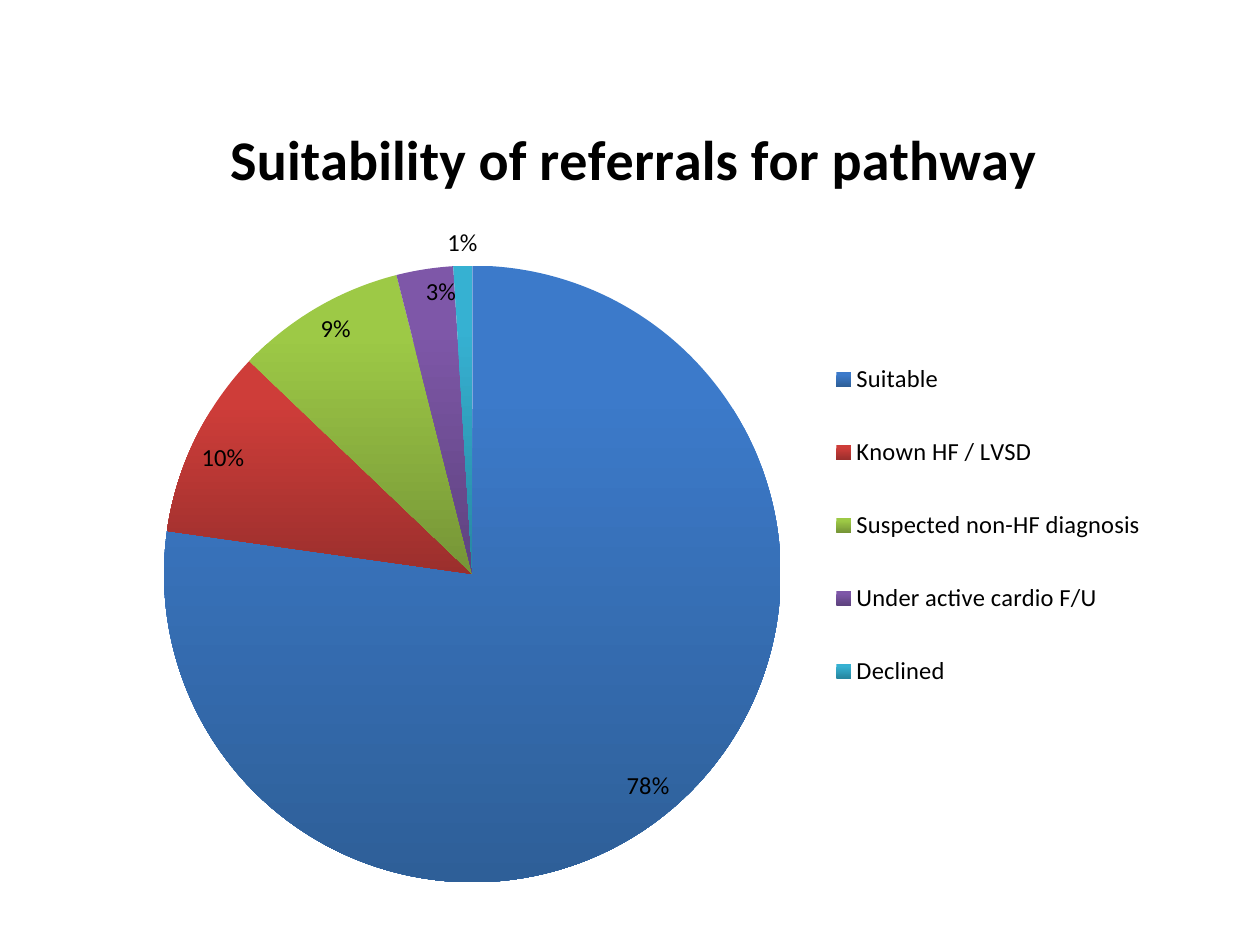
from lxml import etree
from pptx import Presentation
from pptx import util as u
from pptx.chart import data as cd
from pptx.dml.color import RGBColor
from pptx.enum import chart as ce

COLORS = {
    "text": "000000",
    "Suitable": ("3C7ACA", "2E5F98"),
    "Known HF / LVSD": ("CE3D39", "9B2F2D"),
    "Suspected non-HF diagnosis": ("9DC946", "769537"),
    "Under active cardio F/U": ("7E57A8", "5E437F"),
    "Declined": ("36B1D2", "2787A0"),
}
REFERRALS = {
    "Suitable": 78,
    "Known HF / LVSD": 10,
    "Suspected non-HF diagnosis": 9,
    "Under active cardio F/U": 3,
    "Declined": 1,
}


def style_font(font, size, bold=False):
    """Apply the slide's typeface and text colour."""
    font.name, font.size, font.bold = "Calibri", u.Pt(size), bold
    font.color.rgb = RGBColor.from_string(COLORS["text"])


def set_layout(chart, tag, index, inner=False, **fractions):
    """Place a chart part by fractions of the chart area."""
    part = chart._chartSpace.xpath(f"c:chart//c:{tag}")[0]
    ns = "{%s}" % part.nsmap["c"]
    for old in part.findall(ns + "layout"):
        part.remove(old)
    layout = etree.Element(ns + "layout")
    manual = etree.SubElement(layout, ns + "manualLayout")
    if inner:
        etree.SubElement(manual, ns + "layoutTarget", val="inner")
    for axis in "xy":
        etree.SubElement(manual, f"{ns}{axis}Mode", val="edge")
    for key, value in fractions.items():
        etree.SubElement(manual, ns + key, val=str(value))
    part.insert(index, layout)


def style_slices(series):
    """Shade every slice from a light top to a dark bottom."""
    for i, name in enumerate(REFERRALS):
        fill = series.points[i].format.fill
        fill.gradient()
        fill.gradient_angle = 270
        for stop, position, color in zip(fill.gradient_stops, (0.2, 1), COLORS[name]):
            stop.position = position
            stop.color.rgb = RGBColor.from_string(color)


def add_labels(series):
    """Label slices inside, with the narrowest one outside."""
    labels = series.data_labels
    labels.show_value = True
    labels.number_format, labels.number_format_is_linked = '0"%"', False
    labels.position = ce.XL_LABEL_POSITION.INSIDE_END
    style_font(labels.font, 14)
    last = series.points[len(REFERRALS) - 1].data_label
    style_font(last.font, 14)
    last.position = ce.XL_LABEL_POSITION.OUTSIDE_END


def add_referral_pie(slide, left, top, width, height):
    """Draw the referral pie with its title and legend in the given box."""
    data = cd.CategoryChartData(number_format='0"%"')
    data.categories = list(REFERRALS)
    data.add_series("Series 1", list(REFERRALS.values()))
    chart = slide.shapes.add_chart(
        ce.XL_CHART_TYPE.PIE, left, top, width, height, data).chart
    style_font(chart.font, 14)

    chart.has_title = True
    tf = chart.chart_title.text_frame
    tf.text = "Suitability of referrals for pathway"
    style_font(tf.paragraphs[0].runs[0].font, 32, bold=True)

    chart.has_legend = True
    chart.legend.position = ce.XL_LEGEND_POSITION.RIGHT
    chart.legend.include_in_layout = False
    style_font(chart.legend.font, 14)

    plot = chart.plots[0]
    plot.vary_by_categories = True
    series = plot.series[0]
    style_slices(series)
    add_labels(series)

    set_layout(chart, "title", 1, x=0.13, y=0.03)
    set_layout(chart, "plotArea", 0, inner=True, x=0.08, y=0.22, w=0.55, h=0.76)
    set_layout(chart, "legend", 1, x=0.67, y=0.29, w=0.29, h=0.5)


def main():
    """Build and save the slide."""
    prs = Presentation()
    prs.slide_width, prs.slide_height = u.Inches(10), u.Inches(7.5)
    s = prs.slides.add_slide(prs.slide_layouts[6])
    add_referral_pie(s, u.Inches(0.59), u.Inches(0.68), u.Inches(8.9), u.Inches(6.46))
    prs.save("out.pptx")


if __name__ == "__main__":
    main()
